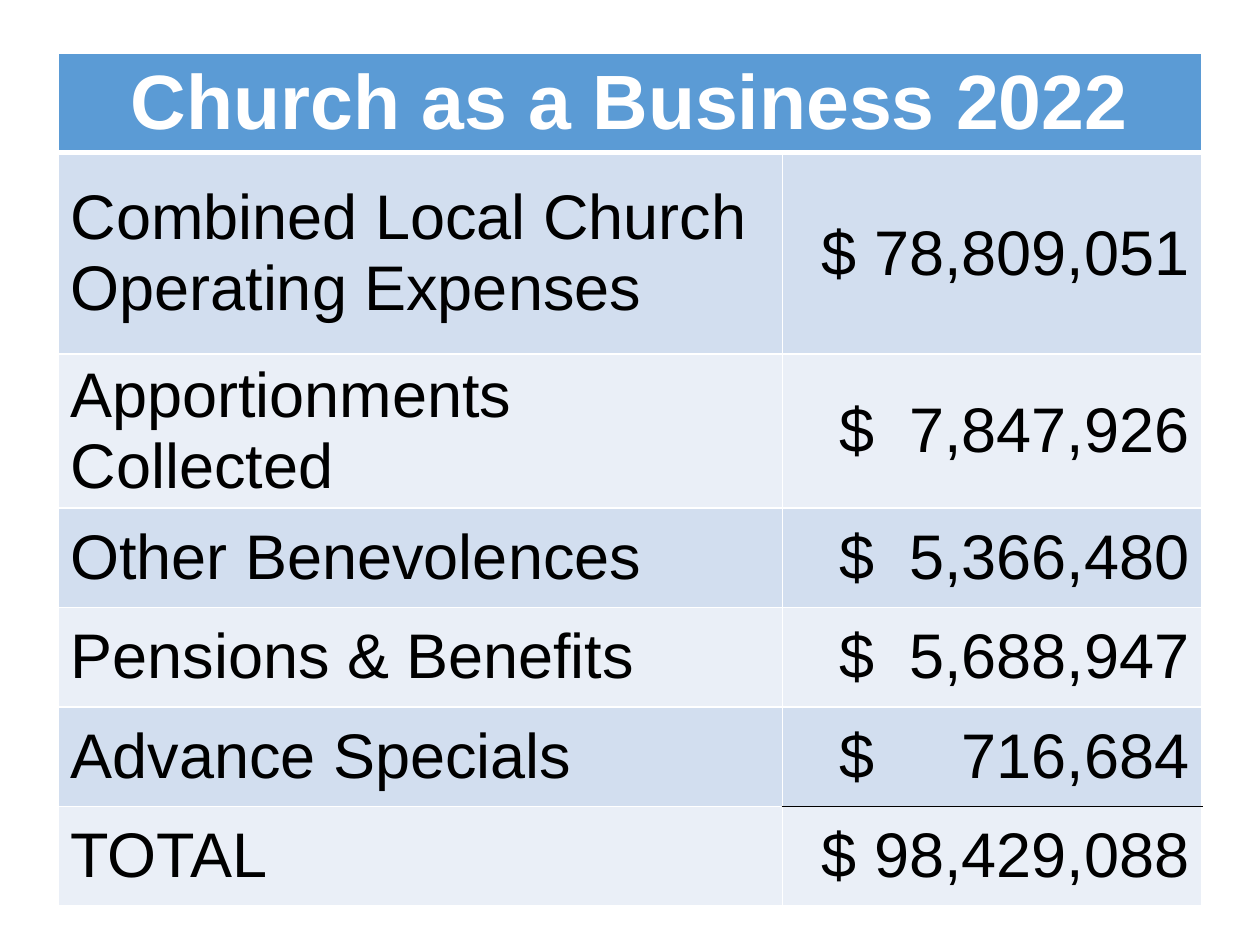
"""Build a slide with a table of church finances for 2022."""
from lxml import etree
from pptx import Presentation
from pptx import util as u
from pptx.dml.color import RGBColor
from pptx.enum import text
from pptx.oxml.ns import qn

TITLE = "Church as a Business 2022"
ROWS = [
    ("Combined Local Church Operating Expenses", "$ 78,809,051"),
    ("Apportionments Collected", "$  7,847,926"),
    ("Other Benevolences", "$  5,366,480"),
    ("Pensions & Benefits", "$  5,688,947"),
    ("Advance Specials", "$     716,684"),
    ("TOTAL", "$ 98,429,088"),
]
COLS = (5.75, 3.33)
HEIGHTS = (0.79, 1.6) + (0.79,) * 5
LEFT, TOP = 0.46, 0.42
THEME = {
    "header": "5B9BD5", "bands": ("D2DEEF", "EAEFF7"), "rule": "FFFFFF", "total_rule": "000000",
    "head_font": {"name": "Arial", "size": u.Pt(44), "bold": True, "color": "FFFFFF"},
    "body_font": {"name": "Arial", "size": u.Pt(36), "bold": False, "color": "000000"},
}
ALIGN = text.PP_ALIGN


def set_borders(cell, **special):
    tc_pr = cell._tc.get_or_add_tcPr()
    for side in "LRTB":
        color, width = special.get(side, (THEME["rule"], 1))
        ln = etree.SubElement(tc_pr, qn(f"a:ln{side}"), w=str(u.Pt(width)))
        fill = etree.SubElement(ln, qn("a:solidFill"))
        etree.SubElement(fill, qn("a:srgbClr"), val=color)


def fill_cell(cell, words, fill, font, align):
    cell.fill.solid()
    cell.fill.fore_color.rgb = RGBColor.from_string(fill)
    cell.vertical_anchor = text.MSO_ANCHOR.MIDDLE
    p = cell.text_frame.paragraphs[0]
    p.alignment = align
    r = p.add_run()
    r.text = words
    for key, value in font.items():
        if key == "color":
            r.font.color.rgb = RGBColor.from_string(value)
        else:
            setattr(r.font, key, value)


def main():
    prs = Presentation()
    prs.slide_width, prs.slide_height = u.Inches(10), u.Inches(7.5)
    s = prs.slides.add_slide(prs.slide_layouts[6])
    box = [u.Inches(v) for v in (LEFT, TOP, sum(COLS), sum(HEIGHTS))]
    table = s.shapes.add_table(len(HEIGHTS), len(COLS), *box).table
    for col, width in zip(table.columns, COLS):
        col.width = u.Inches(width)
    for row, height in zip(table.rows, HEIGHTS):
        row.height = u.Inches(height)

    head_rule, total_rule = (THEME["rule"], 3), (THEME["total_rule"], 1)
    for c in range(len(COLS)):
        set_borders(table.cell(0, c), B=head_rule)
    table.cell(0, 0).merge(table.cell(0, 1))
    fill_cell(table.cell(0, 0), TITLE, THEME["header"], THEME["head_font"], ALIGN.CENTER)

    last = len(ROWS)
    for i, row in enumerate(ROWS, 1):
        for c, (words, align) in enumerate(zip(row, (ALIGN.LEFT, ALIGN.RIGHT))):
            special = {"T": head_rule} if i == 1 else {}
            if c == 1 and i >= last - 1:
                special["T" if i == last else "B"] = total_rule
            cell = table.cell(i, c)
            set_borders(cell, **special)
            fill_cell(cell, words, THEME["bands"][(i - 1) % 2], THEME["body_font"], align)
    prs.save("out.pptx")


if __name__ == "__main__":
    main()
